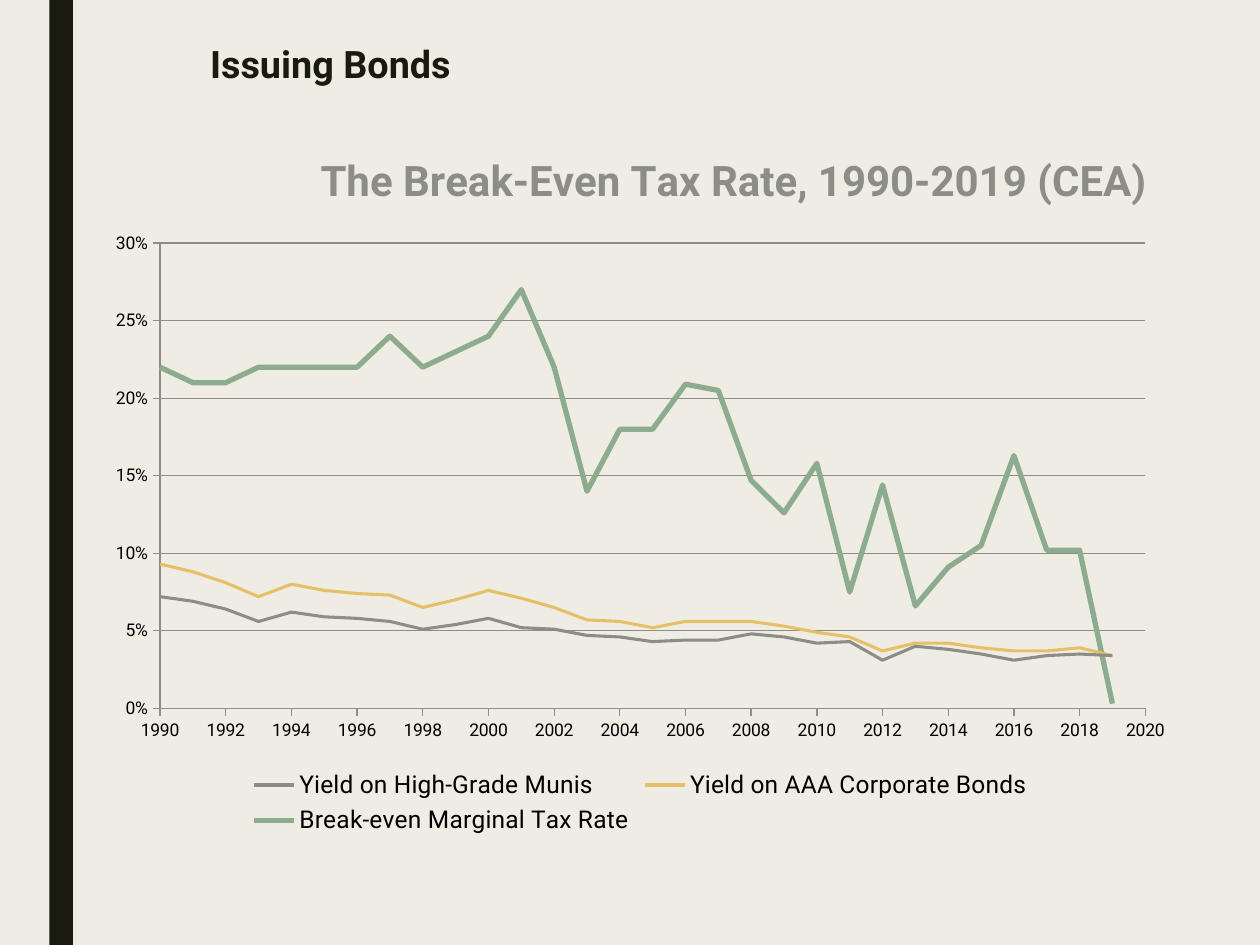
from dataclasses import dataclass

import lxml.etree
import pptx
import pptx.chart.data
import pptx.dml.color
import pptx.enum.chart
import pptx.enum.shapes
import pptx.enum.text
import pptx.oxml.ns
import pptx.util

Pt = pptx.util.Pt
FONT = "Roboto"
BACKGROUND, DARK, GRAY, BLACK = "EFEDE3", "191B0E", "8C8D86", "000000"
FIRST_YEAR = 1990


@dataclass
class YearSeries:
    name: str
    color: str
    width: float
    values: list[float]


SERIES = [
    YearSeries("Yield on High-Grade Munis", GRAY, 1.75, [
        0.072, 0.069, 0.064, 0.056, 0.062, 0.059, 0.058, 0.056, 0.051, 0.054,
        0.058, 0.052, 0.051, 0.047, 0.046, 0.043, 0.044, 0.044, 0.048, 0.046,
        0.042, 0.043, 0.031, 0.04, 0.038, 0.035, 0.031, 0.034, 0.035, 0.034]),
    YearSeries("Yield on AAA Corporate Bonds", "E6C069", 1.75, [
        0.093, 0.088, 0.081, 0.072, 0.08, 0.076, 0.074, 0.073, 0.065, 0.07,
        0.076, 0.071, 0.065, 0.057, 0.056, 0.052, 0.056, 0.056, 0.056, 0.053,
        0.049, 0.046, 0.037, 0.042, 0.042, 0.039, 0.037, 0.037, 0.039, 0.034]),
    YearSeries("Break-even Marginal Tax Rate", "8DAB8E", 3, [
        0.22, 0.21, 0.21, 0.22, 0.22, 0.22, 0.22, 0.24, 0.22, 0.23,
        0.24, 0.27, 0.22, 0.14, 0.18, 0.18, 0.209, 0.205, 0.147, 0.126,
        0.158, 0.075, 0.144, 0.066, 0.091, 0.105, 0.163, 0.102, 0.102, 0.003]),
]


def rgb(color: str) -> pptx.dml.color.RGBColor:
    return pptx.dml.color.RGBColor.from_string(color)


def style_font(font, size: float, color: str, bold: bool = False) -> None:
    font.name = FONT
    font.size = Pt(size)
    font.bold = bold
    font.color.rgb = rgb(color)


def style_line(line, color: str, width: float) -> None:
    line.color.rgb = rgb(color)
    line.width = Pt(width)


def set_layout(element, index: int, **settings) -> None:
    """Give a chart part a manual layout, as fractions of the chart."""
    qn = pptx.oxml.ns.qn
    for old_layout in element.findall(qn("c:layout")):
        element.remove(old_layout)
    layout = lxml.etree.Element(qn("c:layout"))
    manual = lxml.etree.SubElement(layout, qn("c:manualLayout"))
    for tag, value in settings.items():
        lxml.etree.SubElement(manual, qn(f"c:{tag}")).set("val", str(value))
    element.insert(index, layout)


def style_axis(axis, low: float, high: float, step: float, number_format: str) -> None:
    axis.minimum_scale, axis.maximum_scale, axis.major_unit = low, high, step
    axis.major_tick_mark = pptx.enum.chart.XL_TICK_MARK.OUTSIDE
    axis.minor_tick_mark = pptx.enum.chart.XL_TICK_MARK.NONE
    axis.tick_labels.number_format = number_format
    axis.tick_labels.number_format_is_linked = False
    style_font(axis.tick_labels.font, 10, BLACK)
    style_line(axis.format.line, GRAY, 0.75)


def add_rate_chart(slide) -> None:
    data = pptx.chart.data.XyChartData()
    for item in SERIES:
        series_data = data.add_series(item.name)
        for year, value in enumerate(item.values, FIRST_YEAR):
            series_data.add_data_point(year, value)
    chart = slide.shapes.add_chart(
        pptx.enum.chart.XL_CHART_TYPE.XY_SCATTER_LINES_NO_MARKERS,
        Pt(54), Pt(70.56), Pt(624.24), Pt(409.68), data).chart
    style_font(chart.font, 10, BLACK)

    # Chart title, right of centre
    chart.has_title = True
    title = chart.chart_title
    title.text_frame.text = "The Break-Even Tax Rate, 1990-2019 (CEA)"
    style_font(title.text_frame.paragraphs[0].runs[0].font, 24, GRAY, True)
    title.include_in_layout = False
    set_layout(title._element, 1, xMode="edge", yMode="edge", x=0.2, y=0.03)

    # Lines
    plot = chart.plots[0]
    plot.vary_by_categories = False
    for series, item in zip(plot.series, SERIES):
        series.smooth = False
        series.marker.style = pptx.enum.chart.XL_MARKER_STYLE.NONE
        style_line(series.format.line, item.color, item.width)

    # Axes and plot area
    style_axis(chart.category_axis, FIRST_YEAR, 2020, 2, "General")
    style_axis(chart.value_axis, 0, 0.3, 0.05, "0%")
    chart.category_axis.has_major_gridlines = False
    chart.value_axis.has_major_gridlines = True
    style_line(chart.value_axis.major_gridlines.format.line, GRAY, 0.75)
    plot_area = chart._chartSpace.chart.plotArea
    set_layout(plot_area, 0, layoutTarget="inner", xMode="edge", yMode="edge",
               x=0.06, y=0.167, w=0.902, h=0.649)

    # Legend
    chart.has_legend = True
    chart.legend.position = pptx.enum.chart.XL_LEGEND_POSITION.BOTTOM
    chart.legend.include_in_layout = False
    style_font(chart.legend.font, 14, BLACK)


def add_heading(slide, text: str) -> None:
    box = slide.shapes.add_textbox(Pt(113), Pt(21.6), Pt(590.4), Pt(32.4))
    text_frame = box.text_frame
    text_frame.word_wrap = True
    text_frame.vertical_anchor = pptx.enum.text.MSO_ANCHOR.MIDDLE
    text_frame.text = text
    paragraph = text_frame.paragraphs[0]
    paragraph.line_spacing = 0.89
    style_font(paragraph.runs[0].font, 21.6, DARK, True)


def add_side_bar(slide, height: int) -> None:
    bar = slide.shapes.add_shape(
        pptx.enum.shapes.MSO_SHAPE.RECTANGLE, Pt(28.2), 0, Pt(13.5), height)
    bar.shadow.inherit = False
    bar.fill.solid()
    bar.fill.fore_color.rgb = rgb(DARK)
    bar.line.fill.background()


def main() -> None:
    presentation = pptx.Presentation()
    presentation.slide_width, presentation.slide_height = Pt(720), Pt(540)
    slide = presentation.slides.add_slide(presentation.slide_layouts[6])
    slide.background.fill.solid()
    slide.background.fill.fore_color.rgb = rgb(BACKGROUND)
    add_side_bar(slide, presentation.slide_height)
    add_heading(slide, "Issuing Bonds")
    add_rate_chart(slide)
    presentation.save("out.pptx")


if __name__ == "__main__":
    main()
